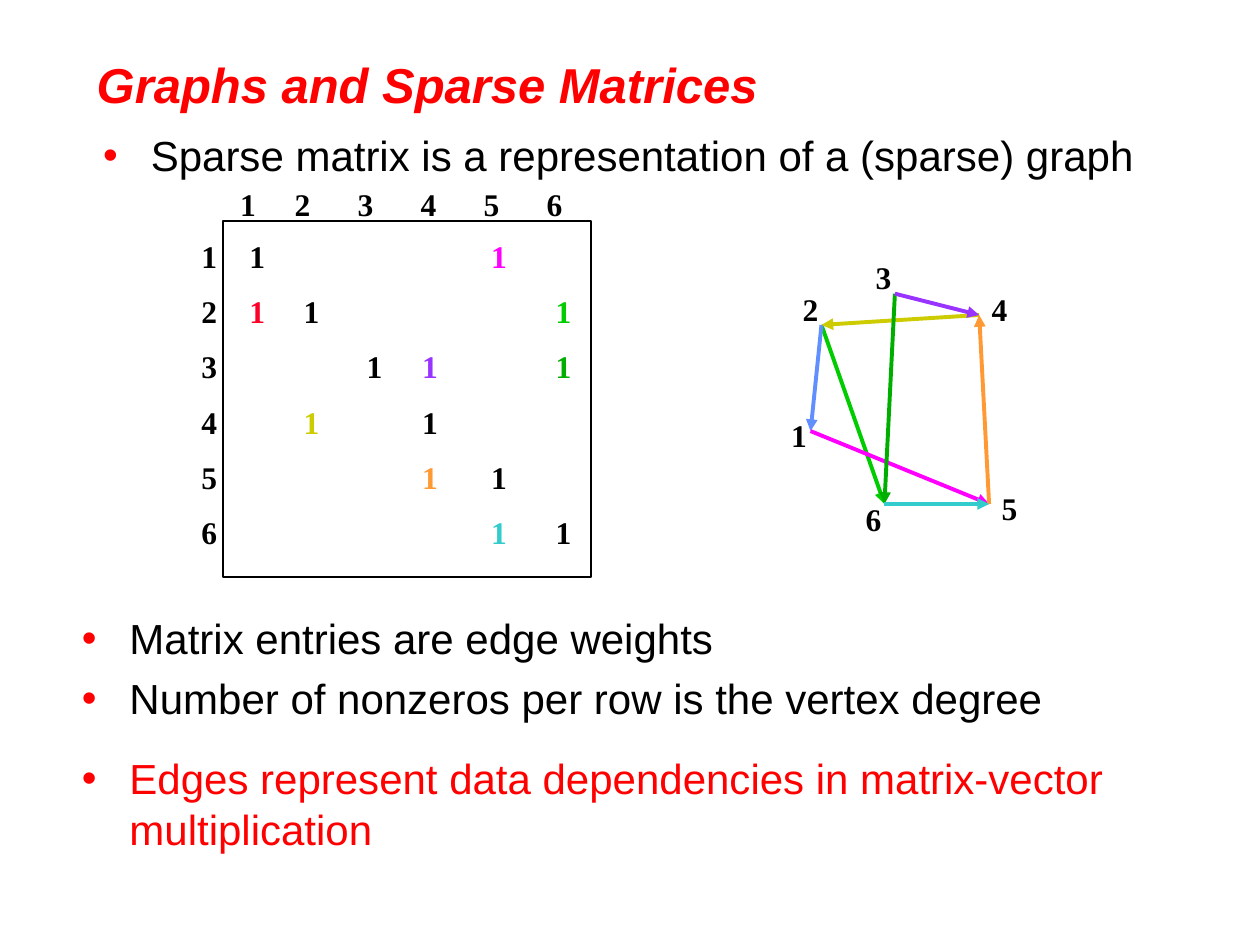
from collections import namedtuple

from lxml.etree import SubElement
from pptx import Presentation
from pptx.dml.color import RGBColor
from pptx.enum.shapes import MSO_CONNECTOR, MSO_SHAPE
from pptx.enum.text import MSO_ANCHOR, MSO_AUTO_SIZE, PP_ALIGN
from pptx.oxml.ns import qn
from pptx.util import Cm, Pt

Box = namedtuple("Box", "left top width height")

COLORS = {
    "black": "000000", "red": "FF0000", "crimson": "FC0128",
    "magenta": "FF00FF", "lime": "00CC00", "green": "00AE00",
    "purple": "9933FF", "olive": "CCCC00", "orange": "FF9933",
    "teal": "33CCCC", "blue": "618FFD",
}

ENTRIES = {
    1: {1: "black", 5: "magenta"},
    2: {1: "crimson", 2: "black", 6: "lime"},
    3: {3: "black", 4: "purple", 6: "green"},
    4: {2: "olive", 4: "black"},
    5: {4: "orange", 5: "black"},
    6: {5: "teal", 6: "black"},
}
HEADER_STOPS = [0.32] + [1.42 + 1.27 * step for step in range(5)]
ENTRY_STOPS = [0.97, 2.06, 3.33, 4.45, 5.84, 7.14]

VERTICES = {
    1: (0.64, 3.61), 2: (0.86, 1.47), 3: (2.34, 0.84),
    4: (4.04, 1.27), 5: (4.24, 5.08), 6: (2.13, 5.08),
}
VERTEX_LABELS = {
    1: (0, 3.18), 2: (0.23, 0.64), 3: (1.7, 0),
    4: (4.04, 0.64), 5: (4.24, 4.65), 6: (1.5, 4.88),
}
EDGES = [
    (2, 6, "lime"), (2, 1, "blue"), (4, 2, "olive"), (1, 5, "magenta"),
    (5, 4, "orange"), (3, 6, "green"), (3, 4, "purple"), (6, 5, "teal"),
]


def rgb(color):
    return RGBColor.from_string(COLORS[color])


def style(run, font, size, color, bold=False, italic=False):
    run.font.name = font
    run.font.size = Pt(size)
    run.font.bold = bold
    run.font.italic = italic
    run.font.color.rgb = rgb(color)


def place(holder, box, inset_x, inset_y, anchor):
    holder.left, holder.top, holder.width, holder.height = map(Cm, box)
    frame = holder.text_frame
    frame.word_wrap = True
    frame.auto_size = MSO_AUTO_SIZE.NONE
    frame.vertical_anchor = anchor
    frame.margin_left = frame.margin_right = Cm(inset_x)
    frame.margin_top = frame.margin_bottom = Cm(inset_y)
    return frame


def add_text(slide, left, top, width, height):
    frame = slide.shapes.add_textbox(Cm(left), Cm(top), Cm(width), Cm(height)).text_frame
    frame.word_wrap = True
    return frame


def add_digits(paragraph, text, color="black"):
    digits = paragraph.add_run()
    digits.text = text
    style(digits, "Times New Roman", 18, color, bold=True)


def set_tabs(paragraph, stops):
    tabs = SubElement(paragraph._p.get_or_add_pPr(), qn("a:tabLst"))
    for stop in stops:
        SubElement(tabs, qn("a:tab"), pos=str(Cm(stop)), algn="l")


def fill_title(holder, box, text):
    frame = place(holder, box, 0.25, 0.13, MSO_ANCHOR.MIDDLE)
    frame.text = text
    heading = frame.paragraphs[0]
    heading.alignment = PP_ALIGN.LEFT
    style(heading.runs[0], "Arial", 28, "red", bold=True, italic=True)


def fill_list(holder, box, items):
    frame = place(holder, box, 0.18, 0.08, MSO_ANCHOR.TOP)
    frame.text = "\n".join(text for text, _, _ in items)
    for point, (_, color, gap) in zip(frame.paragraphs, items):
        point.space_before = Pt(gap)
        style(point.runs[0], "Arial", 24, color)
        props = point._p.get_or_add_pPr()
        props.set("marL", str(Cm(0.96)))
        props.set("indent", str(Cm(-0.96)))
        bullet_color = SubElement(props, qn("a:buClr"))
        SubElement(bullet_color, qn("a:srgbClr"), val=COLORS["red"])
        SubElement(props, qn("a:buFont"), typeface="Arial")
        SubElement(props, qn("a:buChar"), char="•")


def draw_matrix(slide, box):
    border = slide.shapes.add_shape(
        MSO_SHAPE.RECTANGLE, Cm(box.left + 0.69), Cm(box.top + 0.84), Cm(7.42), Cm(7.19))
    border.shadow.inherit = False
    border.fill.background()
    border.line.color.rgb = rgb("black")
    border.line.width = Pt(1)

    rows = add_text(slide, box.left, box.top + 1.04, box.width, 6.76)
    for number, entries in ENTRIES.items():
        row = rows.paragraphs[0] if number == 1 else rows.add_paragraph()
        if number > 1:
            row.space_before = Pt(10)
        set_tabs(row, ENTRY_STOPS)
        add_digits(row, str(number))
        previous = 0
        for column, color in entries.items():
            add_digits(row, "\t" * (column - previous) + "1", color)
            previous = column

    header = add_text(slide, box.left + 0.46, box.top, box.width, 1.02).paragraphs[0]
    set_tabs(header, HEADER_STOPS)
    add_digits(header, "".join(f"\t{column}" for column in ENTRIES))


def draw_graph(slide, box):
    for vertex, (x, y) in VERTEX_LABELS.items():
        label = add_text(slide, box.left + x, box.top + y, 0.64, 1.02)
        add_digits(label.paragraphs[0], str(vertex))
    for source, target, color in EDGES:
        ends = [Cm(origin + offset)
                for vertex in (source, target)
                for origin, offset in zip(box[:2], VERTICES[vertex])]
        edge = slide.shapes.add_connector(MSO_CONNECTOR.STRAIGHT, *ends)
        edge.line.color.rgb = rgb(color)
        edge.line.width = Pt(2.25)
        SubElement(edge.line._get_or_add_ln(), qn("a:tailEnd"), type="triangle")
        SubElement(edge._element.spPr, qn("a:effectLst"))


def main():
    deck = Presentation()
    deck.slide_width, deck.slide_height = Cm(25.4), Cm(19.05)
    slide = deck.slides.add_slide(deck.slide_layouts[3])
    title, definition, properties = list(slide.placeholders)[:3]
    for unused in list(slide.placeholders)[3:]:
        unused._element.getparent().remove(unused._element)

    fill_title(title, Box(1.7, 0.84, 20.8, 1.7), "Graphs and Sparse Matrices")
    draw_matrix(slide, Box(3.81, 3.61, 8.09, 8.03))
    draw_graph(slide, Box(15.7, 5.08, 4.88, 5.9))
    fill_list(definition, Box(1.9, 2.54, 22.86, 1.14), [
        ("Sparse matrix is a representation of a (sparse) graph", "black", 0),
    ])
    fill_list(properties, Box(1.47, 12.27, 23.29, 5.03), [
        ("Matrix entries are edge weights", "black", 0),
        ("Number of nonzeros per row is the vertex degree", "black", 5.5),
        ("Edges represent data dependencies in matrix-vector multiplication", "red", 17),
    ])
    deck.save("out.pptx")


if __name__ == "__main__":
    main()
